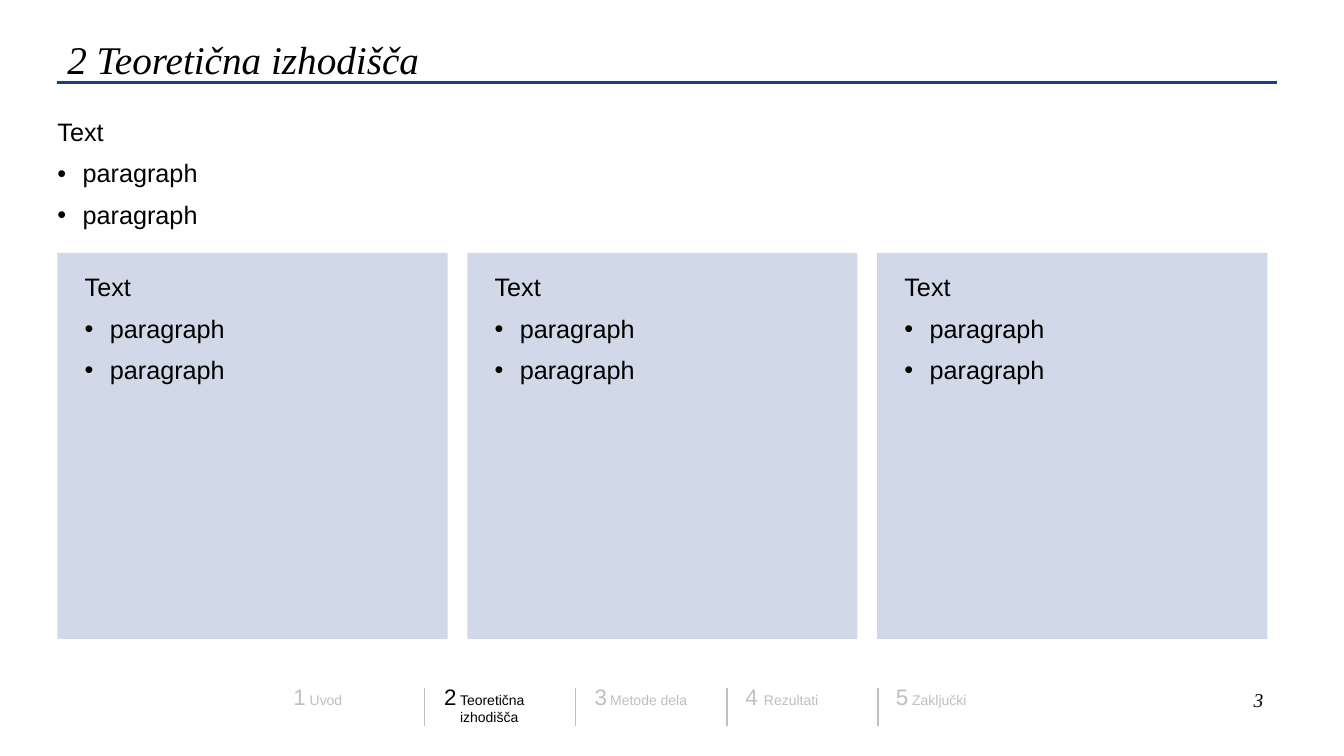
from dataclasses import dataclass

from lxml import etree
from pptx import Presentation
from pptx import util as u
from pptx.dml.color import RGBColor
from pptx.enum import shapes, text
from pptx.oxml.ns import qn

COLORS = {"ink": "000000", "muted": "BFBFBF", "navy": "193C88"}
SANS = "Arial"
SERIF = "Times New Roman"

LEFT = 0.57
PANEL_TOP, PANEL_WIDTH, PANEL_HEIGHT, PANEL_PITCH = 2.51, 3.87, 3.83, 4.065
CHAPTER_LEFT, CHAPTER_PITCH = 2.91, 1.494
DIVIDER_LEFT, DIVIDER_PITCH = 4.21, 1.5


@dataclass(frozen=True)
class Area:
    left: float
    top: float
    width: float
    height: float

    def lengths(self) -> list[u.Length]:
        return [u.Inches(v) for v in (self.left, self.top, self.width, self.height)]


@dataclass(frozen=True)
class Style:
    size: float
    color: str = "ink"
    font: str = SANS
    italic: bool = False


@dataclass(frozen=True)
class Chapter:
    number: str
    lines: tuple[str, ...]
    color: str = "muted"


CHAPTERS = [
    Chapter("1", ("Uvod",)),
    Chapter("2", ("Teoretična", "izhodišča"), "ink"),
    Chapter("3", ("Metode dela",)),
    Chapter("4", ("Rezultati",)),
    Chapter("5", ("Zaključki",)),
]


def rgb(name: str) -> RGBColor:
    return RGBColor.from_string(COLORS[name])


def add_frame(page, area: Area, padded: bool = False):
    frame = page.shapes.add_textbox(*area.lengths()).text_frame
    frame.word_wrap = True
    if not padded:
        frame.margin_left = frame.margin_right = 0
        frame.margin_top = frame.margin_bottom = 0
    return frame


def add_span(para, words: str, style: Style) -> None:
    span = para.add_run()
    span.text = words
    span.font.size = u.Pt(style.size)
    span.font.name = style.font
    span.font.italic = style.italic
    span.font.color.rgb = rgb(style.color)


def set_hanging(para, indent: float) -> None:
    properties = para._p.get_or_add_pPr()
    properties.set("marL", str(u.Inches(indent)))
    properties.set("indent", str(-u.Inches(indent)))


def add_bullet(para) -> None:
    set_hanging(para, 0.25)
    properties = para._p.get_or_add_pPr()
    etree.SubElement(properties, qn("a:buFont"), typeface=SANS)
    etree.SubElement(properties, qn("a:buChar"), char="•")


def add_text_block(page, area: Area) -> None:
    frame = add_frame(page, area)
    for index, words in enumerate(("Text", "paragraph", "paragraph")):
        para = frame.add_paragraph() if index else frame.paragraphs[0]
        if index:
            add_bullet(para)
            para.space_before = u.Pt(10)
        para.line_spacing = 0.9
        add_span(para, words, Style(18))


def add_panel(page, left: float) -> None:
    area = Area(left, PANEL_TOP, PANEL_WIDTH, PANEL_HEIGHT)
    panel = page.shapes.add_shape(shapes.MSO_SHAPE.RECTANGLE, *area.lengths())
    panel.shadow.inherit = False
    panel.line.fill.background()
    panel.fill.solid()
    panel.fill.fore_color.rgb = rgb("navy")
    color = panel._element.spPr.find(".//" + qn("a:srgbClr"))
    etree.SubElement(color, qn("a:alpha"), val="20000")


def add_line(page, start: tuple[float, float], end: tuple[float, float],
             color: str, width: float) -> None:
    points = [u.Inches(v) for v in (*start, *end)]
    line = page.shapes.add_connector(shapes.MSO_CONNECTOR.STRAIGHT, *points)
    line.line.color.rgb = rgb(color)
    line.line.width = u.Pt(width)
    etree.SubElement(line._element.spPr, qn("a:effectLst"))


def add_chapter(page, left: float, chapter: Chapter) -> None:
    para = add_frame(page, Area(left, 6.81, 1.45, 0.44)).paragraphs[0]
    para.line_spacing = 0.9
    set_hanging(para, 0.16)
    add_span(para, chapter.number, Style(16, chapter.color))
    space_size = {"3": 8, "4": 16}.get(chapter.number, 10)
    add_span(para, " ", Style(space_size, chapter.color))
    for index, words in enumerate(chapter.lines):
        if index:
            para.add_line_break()
        add_span(para, words, Style(10, chapter.color))


def main() -> None:
    deck = Presentation()
    deck.slide_width, deck.slide_height = u.Inches(13.33), u.Inches(7.5)
    page = deck.slides.add_slide(deck.slide_layouts[6])

    title = add_frame(page, Area(LEFT, 0.35, 12.01, 0.44), padded=True).paragraphs[0]
    title.line_spacing = 0.9
    add_span(title, "2 Teoretična izhodišča", Style(28, font=SERIF, italic=True))
    add_line(page, (LEFT, 0.82), (12.67, 0.82), "navy", 2)

    for index, chapter in enumerate(CHAPTERS):
        add_chapter(page, CHAPTER_LEFT + index * CHAPTER_PITCH, chapter)
    for index in range(len(CHAPTERS) - 1):
        x = DIVIDER_LEFT + index * DIVIDER_PITCH
        add_line(page, (x, 6.83), (x, 7.2), "muted", 1)

    number = add_frame(page, Area(5.96, 6.78, 6.67, 0.34), padded=True).paragraphs[0]
    number.alignment = text.PP_ALIGN.RIGHT
    add_span(number, "3", Style(14, font=SERIF, italic=True))

    add_text_block(page, Area(LEFT, 1.19, 12.01, 1.25))
    for index in range(3):
        left = LEFT + index * PANEL_PITCH
        add_panel(page, left)
        add_text_block(page, Area(left + 0.27, 2.73, 3.45, 3.47))

    deck.save("out.pptx")


if __name__ == "__main__":
    main()
